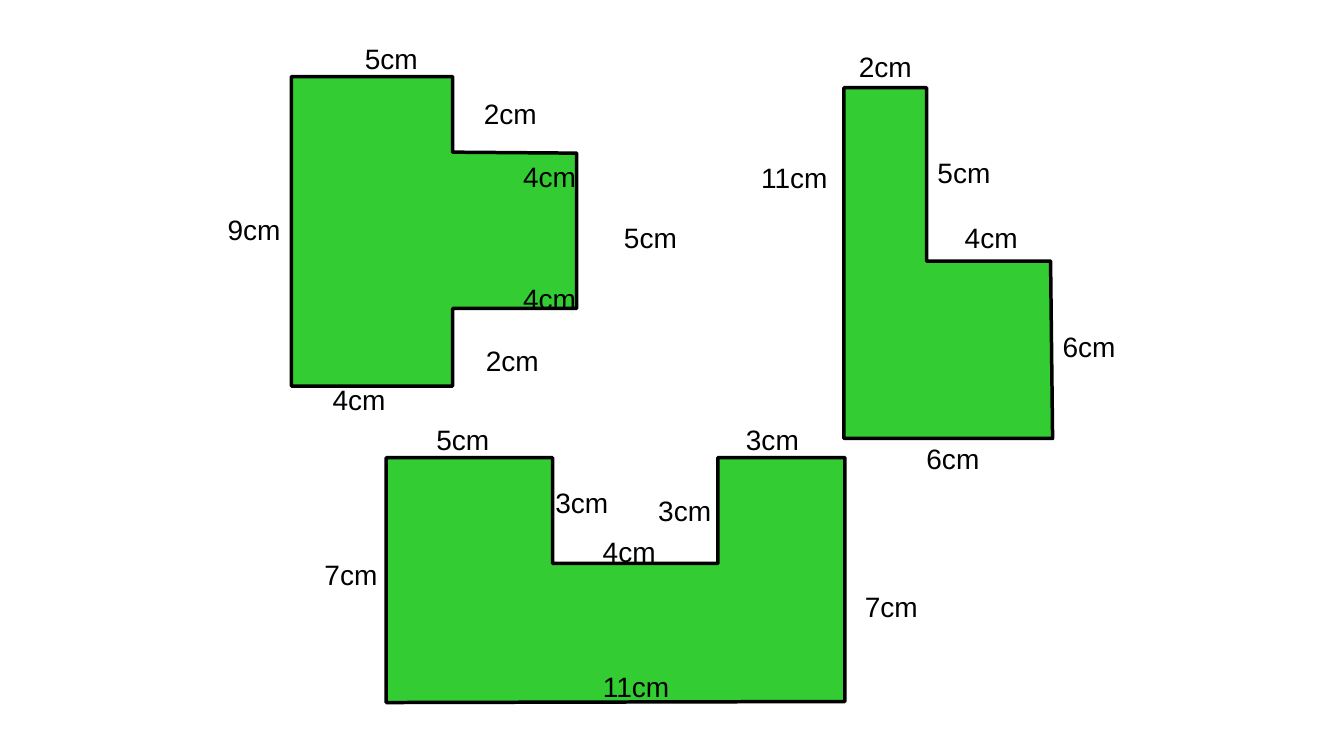
from pptx import Presentation
from pptx.dml.color import RGBColor
from pptx.enum.text import MSO_AUTO_SIZE
from pptx.util import Inches, Pt

FIT = MSO_AUTO_SIZE.SHAPE_TO_FIT_TEXT
GREEN, BLACK = "33CC33", "000000"
FONT, SIZE = "Arial", 20

# Each figure: corner points, then labels as (text, left, top)
TEE = (
    [(2.89, 0.76), (2.89, 3.83), (4.49, 3.83), (4.49, 3.06),
     (5.72, 3.06), (5.72, 1.52), (4.49, 1.51), (4.49, 0.76)],
    [("9cm", 2.16, 2.06), ("5cm", 3.52, 0.36), ("2cm", 4.72, 3.36),
     ("4cm", 5.09, 2.74), ("5cm", 6.09, 2.14), ("4cm", 5.09, 1.53),
     ("2cm", 4.7, 0.91), ("4cm", 3.2, 3.75)],
)
CUP = (
    [(3.83, 4.54), (3.83, 6.97), (8.38, 6.96), (8.38, 4.54),
     (7.12, 4.54), (7.12, 5.59), (5.48, 5.59), (5.48, 4.54)],
    [("5cm", 4.23, 4.14), ("11cm", 5.88, 6.59), ("7cm", 3.12, 5.48),
     ("3cm", 5.41, 4.77), ("3cm", 6.43, 4.85), ("3cm", 7.3, 4.14),
     ("7cm", 8.48, 5.8), ("4cm", 5.88, 5.25)],
)
ELL = (
    [(8.37, 0.87), (8.37, 4.35), (10.44, 4.35),
     (10.42, 2.59), (9.19, 2.59), (9.19, 0.87)],
    [("6cm", 9.09, 4.33), ("6cm", 10.44, 3.22), ("11cm", 7.45, 1.54),
     ("2cm", 8.42, 0.44), ("4cm", 9.47, 2.14), ("5cm", 9.2, 1.49)],
)


def color(code):
    return RGBColor.from_string(code)


def add_outline(shapes, corners):
    points = [(Inches(x), Inches(y)) for x, y in corners]
    pen = shapes.build_freeform(*points[0])
    pen.add_line_segments(points[1:], close=True)
    shape = pen.convert_to_shape()
    shape.shadow.inherit = False
    shape.fill.solid()
    shape.fill.fore_color.rgb = color(GREEN)
    shape.line.color.rgb = color(BLACK)
    shape.line.width = Pt(2.5)


def add_label(shapes, text, left, top):
    width = 0.73 if len(text) == 3 else 0.88
    box = shapes.add_textbox(Inches(left), Inches(top),
                             Inches(width), Inches(0.43))
    frame = box.text_frame
    frame.word_wrap = False
    frame.auto_size = FIT
    run = frame.paragraphs[0].add_run()
    run.text = text
    run.font.name = FONT
    run.font.size = Pt(SIZE)
    run.font.color.rgb = color(BLACK)


def add_figure(shapes, figure):
    corners, labels = figure
    add_outline(shapes, corners)
    for label in labels:
        add_label(shapes, *label)


def main():
    deck = Presentation()
    deck.slide_width = Inches(13.33)
    deck.slide_height = Inches(7.5)
    slide = deck.slides.add_slide(deck.slide_layouts[6])

    # Two loose figures, then the grouped L figure
    add_figure(slide.shapes, TEE)
    add_figure(slide.shapes, CUP)
    add_figure(slide.shapes.add_group_shape().shapes, ELL)

    deck.save("out.pptx")


if __name__ == "__main__":
    main()
